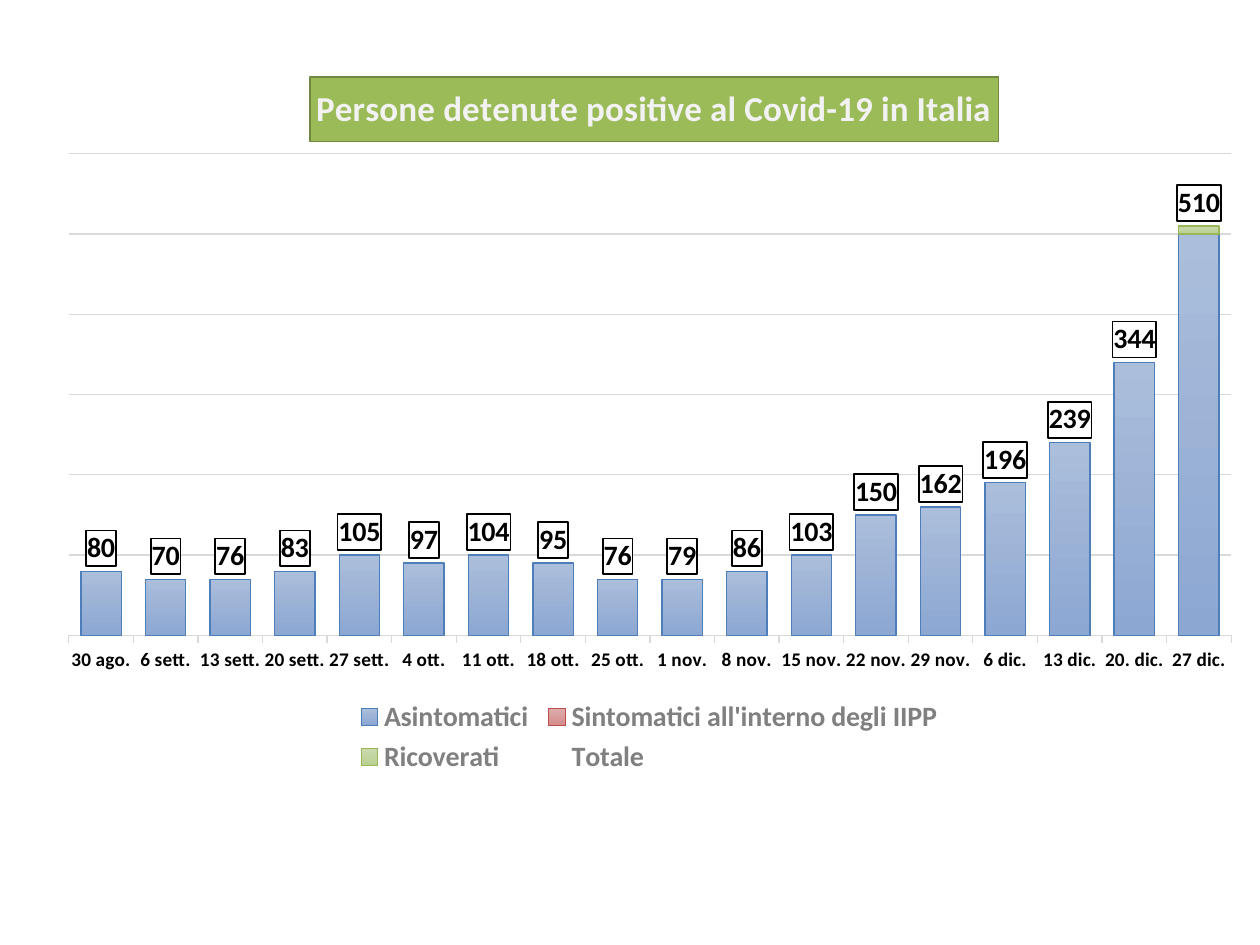
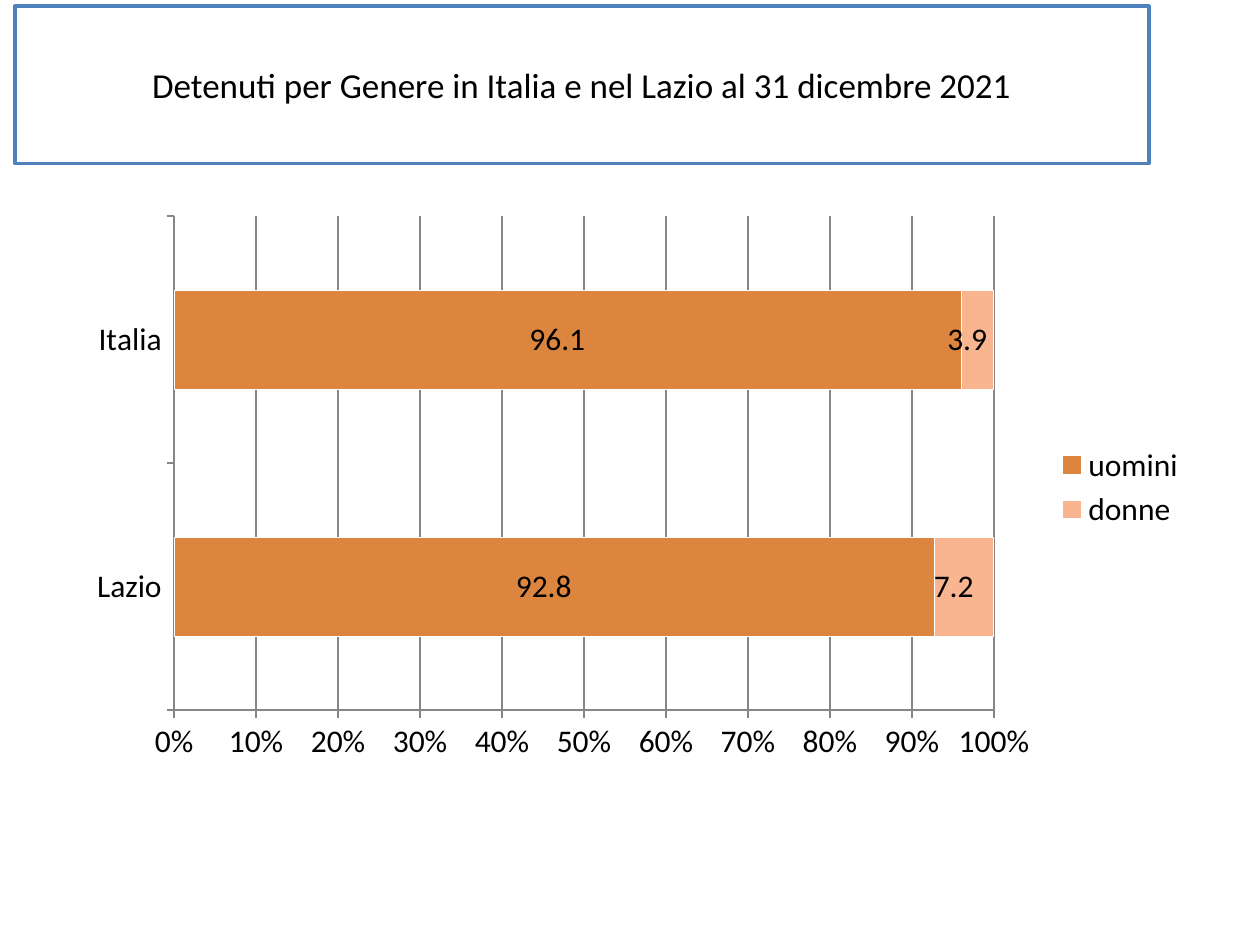
from dataclasses import dataclass

import pptx
import pptx.chart.data
import pptx.dml.color
import pptx.enum.chart
import pptx.enum.shapes
import pptx.enum.text
import pptx.oxml
import pptx.oxml.ns
import pptx.util

Pt = pptx.util.Pt
qn = pptx.oxml.ns.qn
NAMESPACES = pptx.oxml.ns.nsdecls("c", "a")
CHART_TYPE = pptx.enum.chart.XL_CHART_TYPE
LABEL_POSITION = pptx.enum.chart.XL_LABEL_POSITION
LEGEND_POSITION = pptx.enum.chart.XL_LEGEND_POSITION
TICK = pptx.enum.chart.XL_TICK_MARK
TICK_LABELS = pptx.enum.chart.XL_TICK_LABEL_POSITION


@dataclass(frozen=True)
class Theme:
    font: str = "Calibri"
    black: str = "000000"
    white: str = "FFFFFF"
    title_blue: str = "4F81BD"
    banner_green: str = "9BBB59"
    banner_edge: str = "71893F"
    banner_text: str = "F2F2F2"
    legend_grey: str = "808080"
    pale_grid: str = "D9D9D9"
    dark_grid: str = "868686"
    men: str = "DC853E"
    women: str = "F9B590"
    title_size: int = 20
    chart_size: int = 18
    count_size: int = 16
    date_size: int = 11
    hairline: float = 0.75


THEME = Theme()

DATES = ["30 ago.", "6 sett.", "13 sett.", "20 sett.", "27 sett.", "4 ott.",
         "11 ott.", "18 ott.", "25 ott.", "1 nov.", "8 nov.", "15 nov.",
         "22 nov.", "29 nov.", "6 dic.", "13 dic.", "20. dic.", "27 dic."]
POSITIVES = {
    "Asintomatici": [80, 70, 70, 80, 100, 90, 100, 90, 70, 70, 80, 100,
                     150, 160, 190, 240, 340, 500],
    "Sintomatici all'interno degli IIPP": [0] * 18,
    "Ricoverati": [0] * 17 + [10],
    "Totale": [80, 70, 76, 83, 105, 97, 104, 95, 76, 79, 86, 103,
               150, 162, 196, 239, 344, 510],
}
# Gradient top, gradient bottom and outline of each visible series
POSITIVES_COLOURS = [("ABBEDB", "8CA7D2", "4D7EB9"),
                     ("DDACAB", "D48D8B", "BC4E4B"),
                     ("CADAAF", "B9D091", "98B757")]
GENDERS = {"uomini ": [92.8, 96.1], "donne": [7.2, 3.9]}
SHARE_FORMAT = r"_-* #,##0.0\ _€_-;\-* #,##0.0\ _€_-;_-* "


def rgb(colour):
    return pptx.dml.color.RGBColor.from_string(colour)


def style_font(font, size, colour=THEME.black, bold=False):
    font.name = THEME.font
    font.size = Pt(size)
    font.bold = bold
    font.color.rgb = rgb(colour)


def paint(part, fill, line, width=THEME.hairline):
    part.fill.solid()
    part.fill.fore_color.rgb = rgb(fill)
    draw_line(part.line, line, width)


def draw_line(line, colour, width=THEME.hairline):
    line.color.rgb = rgb(colour)
    line.width = Pt(width)


def set_layout(element, after, chart_box, x, y, w=None, h=None):
    """Place a chart part, in points from the chart's corner, after child `after`."""
    chart_width, chart_height = chart_box[2:]
    entries = [("xMode", "edge"), ("yMode", "edge"),
               ("x", x / chart_width), ("y", y / chart_height)]
    if w is not None:
        entries += [("w", w / chart_width), ("h", h / chart_height)]
    if after is None:
        entries.insert(0, ("layoutTarget", "inner"))
    layout = pptx.oxml.parse_xml(f"<c:layout {NAMESPACES}><c:manualLayout/></c:layout>")
    for tag, value in entries:
        layout[0].append(pptx.oxml.parse_xml(f'<c:{tag} {NAMESPACES} val="{value}"/>'))
    for old in element.findall(qn("c:layout")):
        element.remove(old)
    if after is None:
        element.insert(0, layout)
    else:
        element.find(qn(after)).addnext(layout)


def add_bar_chart(slide, box, kind, categories, series, size, gap, bold=False):
    chart_data = pptx.chart.data.CategoryChartData()
    chart_data.categories = categories
    for name, values in series.items():
        chart_data.add_series(name, values)
    chart = slide.shapes.add_chart(kind, *map(Pt, box), chart_data).chart
    style_font(chart.font, size, bold=bold)
    plot = chart.plots[0]
    plot.vary_by_categories = False
    plot.gap_width = gap
    plot.overlap = 100
    chart.has_legend = True
    chart.legend.include_in_layout = False
    chart.value_axis.has_major_gridlines = True
    return chart


def add_chart_banner(chart, chart_box, text):
    chart.has_title = True
    title = chart.chart_title
    title.include_in_layout = False
    paragraph = title.text_frame.paragraphs[0]
    paragraph.add_run().text = text
    style_font(paragraph.font, THEME.title_size, THEME.banner_text, bold=True)
    paint(title.format, THEME.banner_green, THEME.banner_edge, 1)
    set_layout(title._element, "c:tx", chart_box, 152, 12)


def add_framed_totals(series):
    """Show the totals in white framed labels on top of each stack."""
    series.format.fill.background()
    series.format.line.fill.background()
    labels = series.data_labels
    labels.show_value = True
    labels.position = LABEL_POSITION.INSIDE_BASE
    style_font(labels.font, THEME.count_size, bold=True)
    frame = pptx.oxml.parse_xml(
        f'<c:spPr {NAMESPACES}>'
        f'<a:solidFill><a:srgbClr val="{THEME.white}"/></a:solidFill>'
        f'<a:ln w="{Pt(1)}"><a:solidFill><a:srgbClr val="{THEME.black}"/>'
        '</a:solidFill></a:ln></c:spPr>')
    labels._element.find(qn("c:txPr")).addprevious(frame)


def build_positives_slide(slide, box):
    chart = add_bar_chart(slide, box, CHART_TYPE.COLUMN_STACKED, DATES, POSITIVES,
                          THEME.count_size, gap=60, bold=True)
    add_chart_banner(chart, box, "Persone detenute positive al Covid-19 in Italia")
    *groups, totals = chart.plots[0].series
    for group, (top, bottom, edge) in zip(groups, POSITIVES_COLOURS):
        fill = group.format.fill
        fill.gradient()
        fill.gradient_angle = 270
        for stop, colour in zip(fill.gradient_stops, (top, bottom)):
            stop.color.rgb = rgb(colour)
        draw_line(group.format.line, edge)
    add_framed_totals(totals)

    counts = chart.value_axis
    counts.minimum_scale, counts.maximum_scale, counts.major_unit = 0, 600, 100
    counts.visible = False
    draw_line(counts.major_gridlines.format.line, THEME.pale_grid)
    dates = chart.category_axis
    dates.major_tick_mark = TICK.OUTSIDE
    draw_line(dates.format.line, THEME.pale_grid)
    style_font(dates.tick_labels.font, THEME.date_size, bold=True)
    dates._element.find(qn("c:txPr")).find(qn("a:bodyPr")).set("rot", "0")

    chart.legend.position = LEGEND_POSITION.BOTTOM
    style_font(chart.legend.font, THEME.count_size, THEME.legend_grey, bold=True)
    set_layout(chart.legend._element, "c:legendPos", box, 175, 364.5, 342, 49.5)
    set_layout(chart._chartSpace.chart.plotArea, None, box, 14.3, 55.8, 664.3, 275.4)


def add_title_box(slide, box, text):
    title = slide.shapes.add_shape(pptx.enum.shapes.MSO_SHAPE.RECTANGLE, *map(Pt, box))
    title.shadow.inherit = False
    paint(title, THEME.white, THEME.title_blue, 2)
    frame = title.text_frame
    frame.word_wrap = True
    frame.vertical_anchor = pptx.enum.text.MSO_ANCHOR.MIDDLE
    paragraph = frame.paragraphs[0]
    paragraph.text = text
    paragraph.alignment = pptx.enum.text.PP_ALIGN.CENTER
    style_font(paragraph.font, THEME.title_size)


def build_gender_slide(slide, title_box, chart_box):
    add_title_box(slide, title_box,
                  "Detenuti per Genere in Italia e nel Lazio al 31 dicembre 2021")
    chart = add_bar_chart(slide, chart_box, CHART_TYPE.BAR_STACKED_100,
                          ["Lazio", "Italia"], GENDERS, THEME.chart_size, gap=150)
    for gender, colour in zip(chart.plots[0].series, (THEME.men, THEME.women)):
        paint(gender.format, colour, THEME.white, 0.5)
        labels = gender.data_labels
        labels.show_value = True
        labels.position = LABEL_POSITION.CENTER
        labels.number_format = SHARE_FORMAT
        labels.number_format_is_linked = False
        style_font(labels.font, THEME.chart_size)

    shares = chart.value_axis
    shares.minimum_scale, shares.maximum_scale, shares.major_unit = 0, 1, 0.1
    shares.tick_labels.number_format = "0%"
    shares.tick_labels.number_format_is_linked = False
    draw_line(shares.major_gridlines.format.line, THEME.dark_grid, 1)
    for axis in (shares, chart.category_axis):
        axis.major_tick_mark = TICK.OUTSIDE
        axis.tick_label_position = TICK_LABELS.NEXT_TO_AXIS
        draw_line(axis.format.line, THEME.dark_grid, 1)
        style_font(axis.tick_labels.font, THEME.chart_size)

    chart.legend.position = LEGEND_POSITION.RIGHT
    style_font(chart.legend.font, THEME.chart_size)
    set_layout(chart._chartSpace.chart.plotArea, None, chart_box, 57, 7, 468.5, 282.5)


def main():
    deck = pptx.Presentation()
    deck.slide_width, deck.slide_height = Pt(720), Pt(540)
    blank = deck.slide_layouts[6]
    build_positives_slide(deck.slides.add_slide(blank), (25, 32, 692, 414))
    build_gender_slide(deck.slides.add_slide(blank),
                       (8.5, 3.5, 648, 90), (42.5, 116.5, 646.5, 324))
    deck.save("out.pptx")


if __name__ == "__main__":
    main()
